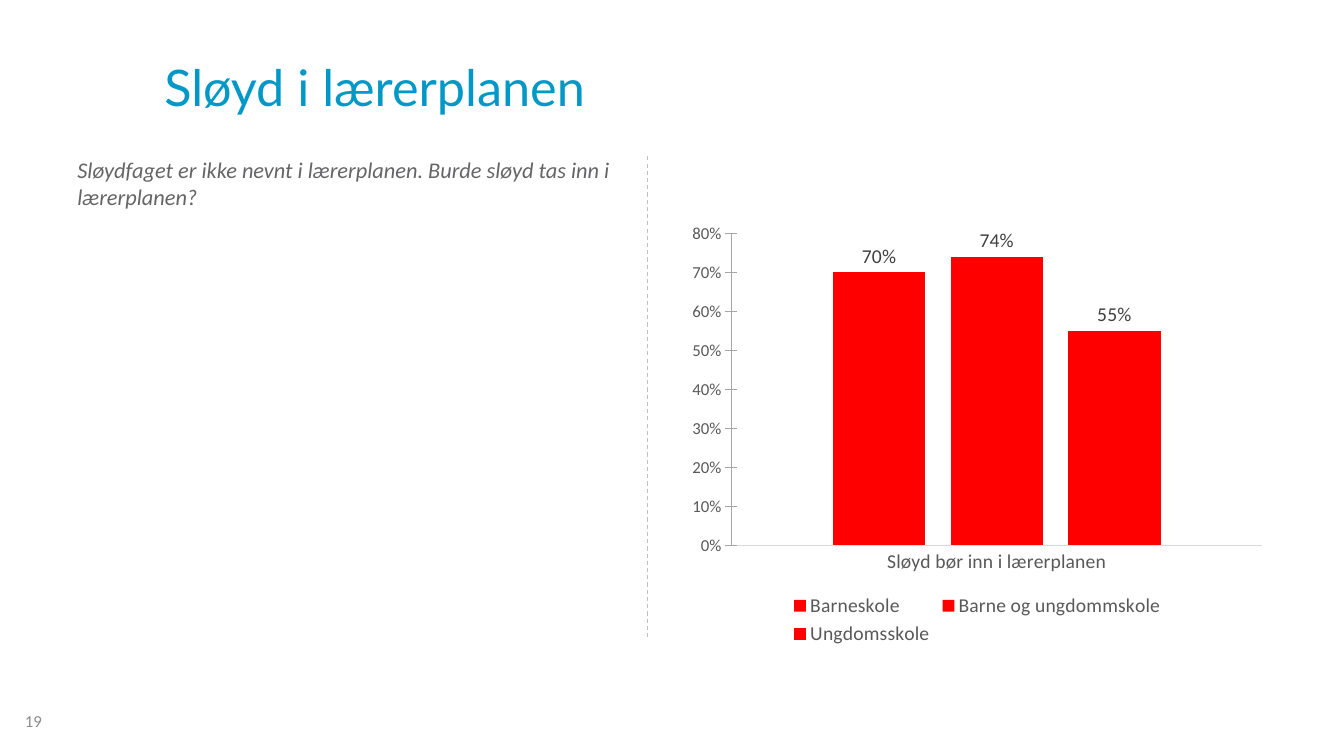
from lxml import etree
from pptx import Presentation
from pptx import util as u
from pptx.chart.data import CategoryChartData
from pptx.dml.color import RGBColor
from pptx.enum import chart as ch, dml, shapes, text
from pptx.oxml.ns import qn

COLORS = {
    "title": "0098C6", "question": "656567", "number": "8C8C8C",
    "divider": "BFBFBF", "bar": "FF0000", "value": "404040",
    "label": "595959", "cat_line": "D9D9D9", "val_line": "A6A6A6",
}
ANSWERS = {"Barneskole": 0.7, "Barne og ungdommskole": 0.74, "Ungdomsskole": 0.55}


class SlideBuilder:
    body_font = "Calibri"
    title_font = "Lato"

    def __init__(self, prs):
        self.s = prs.slides.add_slide(prs.slide_layouts[5])

    def style_font(self, font, size, color, name=None):
        font.name = name or self.body_font
        font.size = u.Pt(size)
        font.color.rgb = RGBColor.from_string(COLORS[color])

    def style_line(self, line, color):
        line.color.rgb = RGBColor.from_string(COLORS[color])
        line.width = u.Pt(0.75)

    def fill_text(self, sp, words, size, color, anchor, name=None, italic=None):
        tf = sp.text_frame
        tf.word_wrap = True
        tf.auto_size = text.MSO_AUTO_SIZE.NONE
        tf.vertical_anchor = anchor
        tf.text = words
        p = tf.paragraphs[0]
        p.alignment = text.PP_ALIGN.LEFT
        r = p.runs[0]
        self.style_font(r.font, size, color, name)
        r.font.italic = italic

    def title(self, words, left, top, width, height):
        sp = self.s.shapes.title
        sp.left, sp.top, sp.width, sp.height = map(u.Cm, (left, top, width, height))
        self.fill_text(sp, words, 36, "title", text.MSO_ANCHOR.MIDDLE, self.title_font)

    def text(self, words, box, size, color, anchor, italic=None):
        sp = self.s.shapes.add_textbox(*map(u.Cm, box))
        self.fill_text(sp, words, size, color, anchor, italic=italic)

    def divider(self, x, top, bottom):
        line = self.s.shapes.add_connector(
            shapes.MSO_CONNECTOR.STRAIGHT, u.Cm(x), u.Cm(top), u.Cm(x), u.Cm(bottom))
        self.style_line(line.line, "divider")
        line.line.dash_style = dml.MSO_LINE.DASH
        etree.SubElement(line._element.spPr, qn("a:effectLst"))

    def columns(self, category, answers, box):
        data = CategoryChartData(number_format="0%")
        data.categories = [category]
        for name, share in answers.items():
            data.add_series(name, [share])
        chart = self.s.shapes.add_chart(
            ch.XL_CHART_TYPE.COLUMN_CLUSTERED, *map(u.Cm, box), data).chart
        chart.font.name = self.body_font
        chart.font.size = u.Pt(10)
        chart.has_title = False
        chart.has_legend = True
        chart.legend.position = ch.XL_LEGEND_POSITION.BOTTOM
        chart.legend.include_in_layout = False
        self.style_font(chart.legend.font, 14, "label")

        plot = chart.plots[0]
        plot.vary_by_categories = False
        plot.gap_width = 219
        plot.overlap = -27
        for series in plot.series:
            series.format.fill.solid()
            series.format.fill.fore_color.rgb = RGBColor.from_string(COLORS["bar"])
            labels = series.data_labels
            labels.show_value = True
            labels.position = ch.XL_LABEL_POSITION.OUTSIDE_END
            labels.number_format = "0%"
            labels.number_format_is_linked = False
            self.style_font(labels.font, 14, "value")

        for axis, size, color, tick in (
            (chart.category_axis, 14, "cat_line", ch.XL_TICK_MARK.NONE),
            (chart.value_axis, 12, "val_line", ch.XL_TICK_MARK.CROSS),
        ):
            axis.has_major_gridlines = False
            axis.major_tick_mark = tick
            axis.minor_tick_mark = ch.XL_TICK_MARK.NONE
            self.style_font(axis.tick_labels.font, size, "label")
            self.style_line(axis.format.line, color)
        shares = chart.value_axis
        shares.minimum_scale = 0
        shares.maximum_scale = 0.8
        shares.major_unit = 0.1
        shares.tick_labels.number_format = "0%"
        shares.tick_labels.number_format_is_linked = False


def main():
    prs = Presentation()
    prs.slide_width = u.Cm(33.87)
    prs.slide_height = u.Cm(19.05)
    slide = SlideBuilder(prs)
    slide.title("Sløyd i lærerplanen", 3.89, 0.58, 28.7, 3.18)
    slide.text(
        "Sløydfaget er ikke nevnt i lærerplanen. Burde sløyd tas inn i lærerplanen?",
        (1.7, 3.63, 14.96, 1.78), 16, "question", text.MSO_ANCHOR.BOTTOM, italic=True)
    slide.divider(16.31, 3.94, 16.05)
    slide.columns("Sløyd bør inn i lærerplanen", ANSWERS, (17.15, 5.41, 14.96, 10.97))
    slide.text("19", (0.38, 17.65, 7.9, 1.02), 12, "number", text.MSO_ANCHOR.MIDDLE)
    prs.save("out.pptx")


if __name__ == "__main__":
    main()
